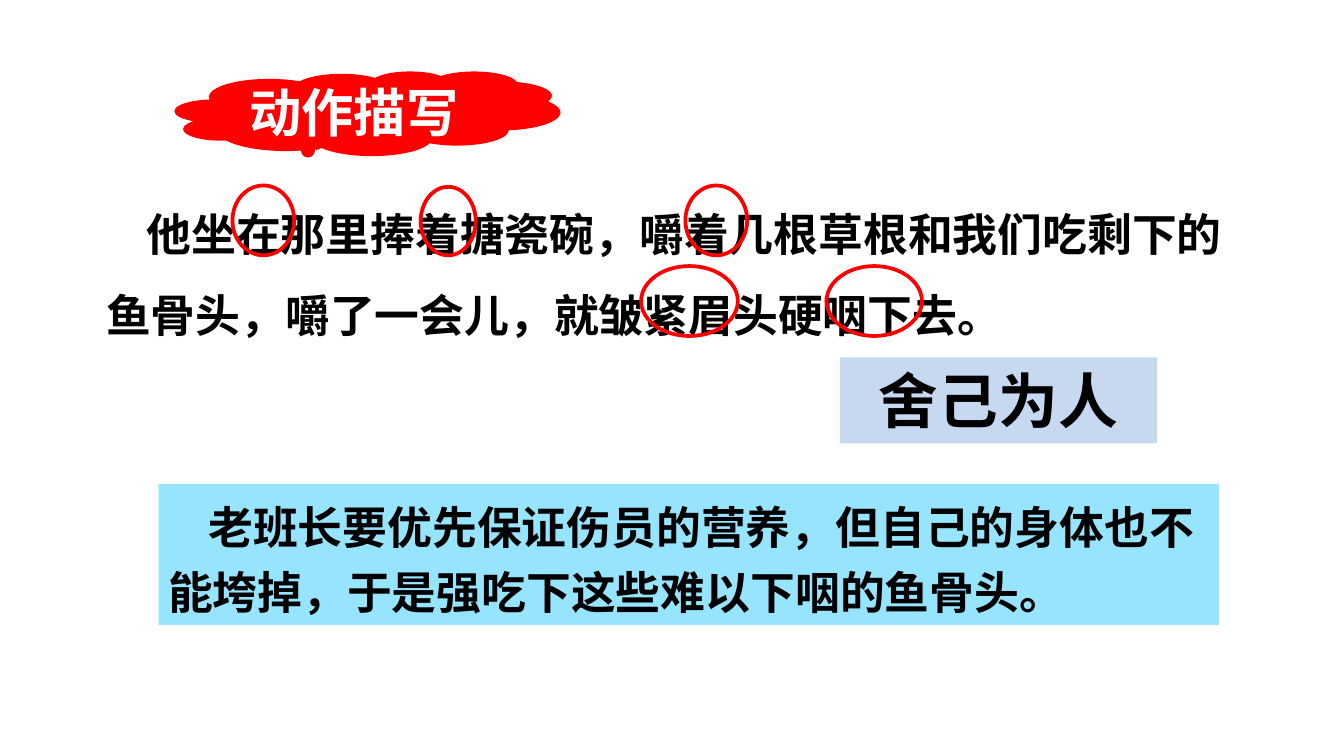
from lxml import etree
from pptx import Presentation
from pptx.dml.color import RGBColor
from pptx.enum import shapes, text
from pptx.oxml import ns
from pptx.util import Inches, Pt

FONT = "Noto Sans CJK SC"
BLACK = RGBColor(0x00, 0x00, 0x00)
WHITE = RGBColor(0xFF, 0xFF, 0xFF)
RED = RGBColor(0xFF, 0x00, 0x00)
CYAN = RGBColor(0x97, 0xE4, 0xFF)
PALE_BLUE = RGBColor(0xC6, 0xD9, 0xF1)

# Content: wording, (left, top, width, height), fill, line spacing
PASSAGES = [
    ("他坐在那里捧着搪瓷碗，嚼着几根草根和我们吃剩下的鱼骨头，嚼了一会儿，就皱紧眉头硬咽下去。",
     (0.72, 1.3, 8.54, 1.19), WHITE, 1.5),
    ("老班长要优先保证伤员的营养，但自己的身体也不能垮掉，于是强吃下这些难以下咽的鱼骨头。",
     (1.18, 3.6, 7.89, 1.05), CYAN, 1.2),
]
TITLE = ("动作描写", (1.3, 0.53, 2.87, 0.63))
THEME = ("舍己为人", (6.25, 2.66, 2.36, 0.64))
ACTION_RINGS = [
    (1.73, 1.38, 0.46, 0.52),
    (3.13, 1.39, 0.41, 0.51),
    (5.1, 1.38, 0.46, 0.52),
    (6.15, 1.98, 0.71, 0.52),
    (4.77, 1.98, 0.72, 0.52),
]


def add_shape(slide, kind, box, fill=None, line=None):
    sp = slide.shapes.add_shape(kind, *map(Inches, box))
    sp.shadow.inherit = False
    if fill is None:
        sp.fill.background()
    else:
        sp.fill.solid()
        sp.fill.fore_color.rgb = fill
    if line is None:
        sp.line.fill.background()
    else:
        sp.line.color.rgb = line
        sp.line.width = Pt(2)
    return sp


def write(sp, words, size, color, align, anchor):
    tf = sp.text_frame
    tf.word_wrap = True
    tf.vertical_anchor = anchor
    p = tf.paragraphs[0]
    p.alignment = align
    r = p.add_run()
    r.text = words
    for font in (p.font, r.font):
        font.name, font.size, font.bold = FONT, Pt(size), True
        font.color.rgb = color
    # Chinese glyphs take the East Asian typeface
    etree.SubElement(r.font._element, ns.qn("a:ea"), typeface=FONT)
    return p


prs = Presentation()
prs.slide_width = Inches(10)
prs.slide_height = prs.slide_width * 9 // 16
s = prs.slides.add_slide(prs.slide_layouts[6])
kinds = shapes.MSO_SHAPE
align, anchor = text.PP_ALIGN, text.MSO_ANCHOR

# Quoted passage and its explanation
for words, box, fill, spacing in PASSAGES:
    sp = add_shape(s, kinds.RECTANGLE, box, fill)
    tf = sp.text_frame
    tf.margin_left = tf.margin_right = Inches(0.07)
    tf.margin_top = tf.margin_bottom = Inches(0.04)
    p = write(sp, words, 24, BLACK, align.LEFT, anchor.TOP)
    p.line_spacing = spacing
    p._p.get_or_add_pPr().set("indent", str(Inches(0.3)))

# Rings around the action words
for box in ACTION_RINGS:
    add_shape(s, kinds.OVAL, box, line=RED)

# Cloud title
words, box = TITLE
cloud = add_shape(s, kinds.CLOUD_CALLOUT, box, RED)
cloud.adjustments[0], cloud.adjustments[1] = -0.12, 0.34
write(cloud, words, 28, WHITE, align.CENTER, anchor.MIDDLE)

# Theme label
words, box = THEME
label = add_shape(s, kinds.RECTANGLE, box, PALE_BLUE)
write(label, words, 32, BLACK, align.CENTER, anchor.TOP)

prs.save("out.pptx")
